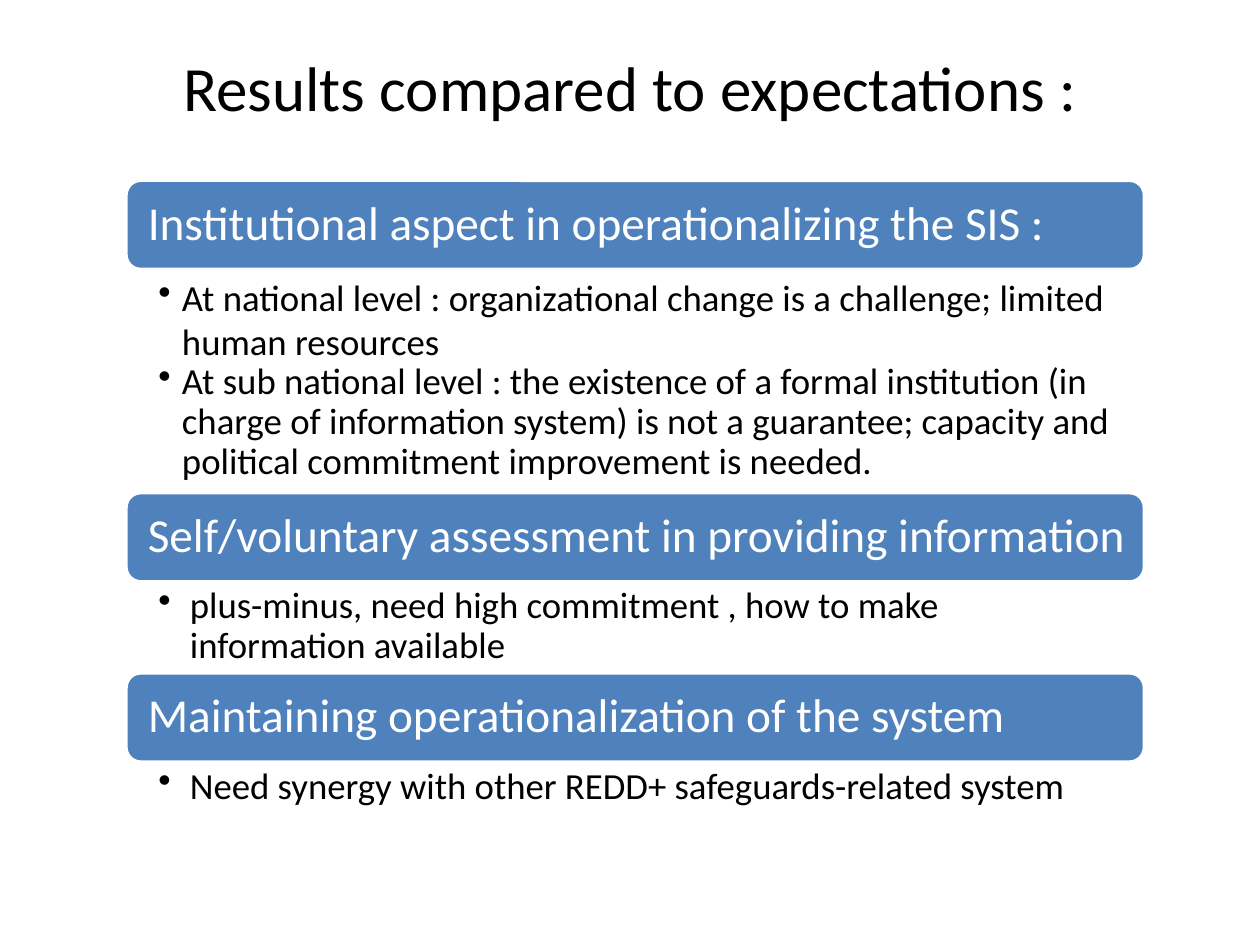
"""Build a slide of three headed bars with bullet points below each."""
from dataclasses import dataclass

from lxml import etree
from pptx import Presentation
from pptx import util as u
from pptx.dml.color import RGBColor
from pptx.enum import shapes, text
from pptx.oxml import ns


@dataclass(frozen=True)
class Theme:
    font: str = "Calibri"
    ink: str = "000000"
    paper: str = "FFFFFF"
    bar: str = "4F81BD"
    title: float = 36
    head: float = 27
    body: float = 21


LOOK = Theme()
LEFT, TOP, WIDTH, BAR = 72, 103, 582, 51
PARTS = [
    ("Institutional aspect in operationalizing the SIS :", 127.5, 13.5, [
        ("At national level : organizational change is a challenge; "
         "limited human resources", 1.0),
        ("At sub national level : the existence of a formal institution "
         "(in charge of information system) is not a guarantee; capacity "
         "and political commitment improvement is needed.", 0.9)]),
    ("Self/voluntary assessment in providing information", 52, 18, [
        ("plus-minus, need high commitment , how to make "
         "information available", 0.9)]),
    ("Maintaining operationalization of the system", 35, 18, [
        ("Need synergy with other REDD+ safeguards-related system", 0.9)]),
]


def write(para, words, size, color=LOOK.ink, align=text.PP_ALIGN.LEFT,
          space=1.0, hang=0):
    """Fill a paragraph with formatted text, bulleted when hang is given."""
    para.alignment, para.line_spacing = align, space
    para.space_before = para.space_after = u.Pt(0)
    run = para.add_run()
    run.text = words
    run.font.name, run.font.size = LOOK.font, u.Pt(size)
    run.font.color.rgb = RGBColor.from_string(color)
    if hang:
        props = para._p.get_or_add_pPr()
        props.set("marL", str(u.Pt(hang)))
        props.set("indent", str(-u.Pt(hang)))
        etree.SubElement(props, ns.qn("a:buChar"), char="•")


def setup(frame, left, top, right, anchor):
    """Set the wrap, insets and anchor of a text frame."""
    frame.word_wrap, frame.vertical_anchor = True, anchor
    frame.margin_left, frame.margin_right = u.Pt(left), u.Pt(right)
    frame.margin_top = frame.margin_bottom = u.Pt(top)


def title(slide, words):
    """Place and fill the title."""
    box = slide.shapes.title
    box.left, box.top, box.width, box.height = map(u.Pt, (36, 18, 648, 63))
    box.text_frame.vertical_anchor = text.MSO_ANCHOR.MIDDLE
    write(box.text_frame.paragraphs[0], words, LOOK.title,
          align=text.PP_ALIGN.CENTER)


def header(slide, top, words):
    """Draw a rounded bar with its heading."""
    bar = slide.shapes.add_shape(shapes.MSO_SHAPE.ROUNDED_RECTANGLE,
                                 *map(u.Pt, (LEFT, top, WIDTH, BAR)))
    bar.shadow.inherit = False
    bar.fill.solid()
    bar.fill.fore_color.rgb = RGBColor.from_string(LOOK.bar)
    bar.line.color.rgb = RGBColor.from_string(LOOK.paper)
    bar.line.width = u.Pt(2)
    setup(bar.text_frame, 10, 8, 8, text.MSO_ANCHOR.MIDDLE)
    write(bar.text_frame.paragraphs[0], words, LOOK.head, LOOK.paper,
          space=0.9)


def points(slide, top, height, hang, items):
    """Write the bullet points below a bar."""
    box = slide.shapes.add_textbox(*map(u.Pt, (LEFT, top, WIDTH, height)))
    frame = box.text_frame
    setup(frame, 18.5, 3, 15.5, text.MSO_ANCHOR.TOP)
    for i, (words, space) in enumerate(items):
        para = frame.add_paragraph() if i else frame.paragraphs[0]
        para.level = 1
        write(para, words, LOOK.body, space=space, hang=hang)


def main():
    """Build and save the slide."""
    deck = Presentation()
    deck.slide_width, deck.slide_height = u.Pt(720), u.Pt(540)
    slide = deck.slides.add_slide(deck.slide_layouts[5])
    title(slide, "Results compared to expectations :")
    top = TOP
    for head, height, hang, items in PARTS:
        header(slide, top, head)
        points(slide, top + BAR, height, hang, items)
        top += BAR + height
    deck.save("out.pptx")


if __name__ == "__main__":
    main()
